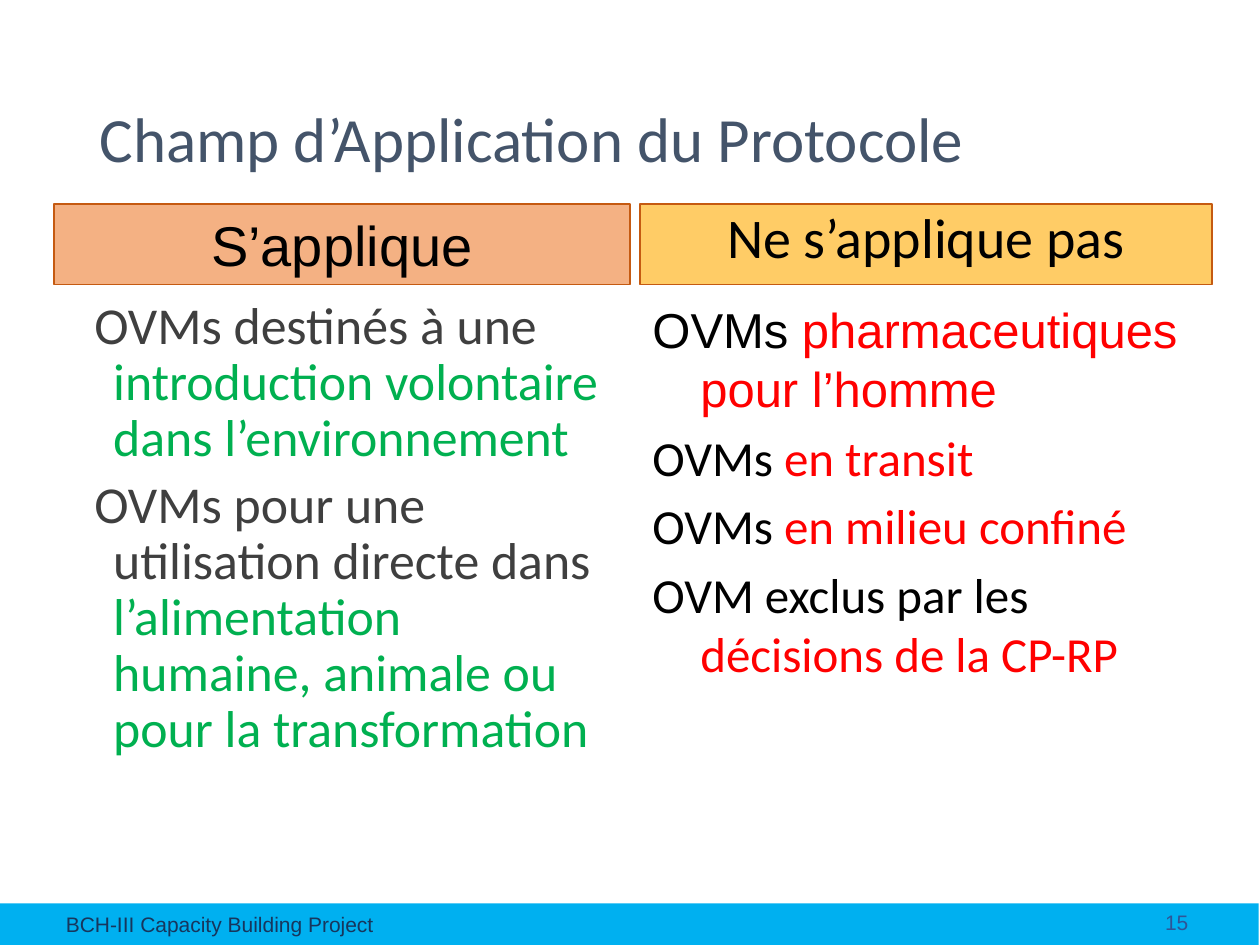
"""Build the slide on the scope of the Protocol: what it covers and what it does not."""
from pptx import Presentation
from pptx.dml.color import RGBColor
from pptx.enum import shapes, text
from pptx.util import Pt

BLACK = RGBColor(0, 0, 0)
GREY = RGBColor(0x3F, 0x3F, 0x3F)
SLATE = RGBColor(0x44, 0x54, 0x6A)
NAVY = RGBColor(0x17, 0x36, 0x5D)
BLUE = RGBColor(0x2F, 0x55, 0x97)
SKY = RGBColor(0x00, 0xB0, 0xF0)
GREEN = RGBColor(0x00, 0xB0, 0x50)
RED = RGBColor(0xFF, 0, 0)
SALMON = RGBColor(0xF4, 0xB1, 0x83)
GOLD = RGBColor(0xFF, 0xCC, 0x66)
RUST = RGBColor(0xC5, 0x5A, 0x11)
LEFT, CENTER, RIGHT = text.PP_ALIGN.LEFT, text.PP_ALIGN.CENTER, text.PP_ALIGN.RIGHT
TOP, MIDDLE = text.MSO_ANCHOR.TOP, text.MSO_ANCHOR.MIDDLE


def add_bar(left, top, width, height, fill):
    bar = slide.shapes.add_shape(shapes.MSO_SHAPE.RECTANGLE, Pt(left), Pt(top), Pt(width), Pt(height))
    bar.shadow.inherit = False
    bar.fill.solid()
    bar.fill.fore_color.rgb = fill
    return bar


def write(holder, words, font, size, color, align, anchor):
    frame = holder.text_frame
    frame.word_wrap = True
    frame.vertical_anchor = anchor
    paragraph = frame.paragraphs[0]
    paragraph.text = words
    paragraph.alignment = align
    paragraph.font.name, paragraph.font.size = font, Pt(size)
    paragraph.font.color.rgb = color
    return paragraph


prs = Presentation()
prs.slide_width, prs.slide_height = Pt(720), Pt(540)
slide = prs.slides.add_slide(prs.slide_layouts[5])

title = slide.shapes.title
title.left, title.top, title.width, title.height = Pt(49.68), Pt(28.8), Pt(620.64), Pt(104.4)
heading = write(title, "Champ d’Application du Protocole", "Calibri", 36, SLATE, LEFT, MIDDLE)
heading.line_spacing = 0.9

footer_band = add_bar(0, 516.24, 719.28, 25.92, SKY)
footer_band.line.fill.background()
for words, left, top, width, height, color, align in (
    ("BCH-III Capacity Building Project", 11.52, 516.96, 228.24, 22.32, NAVY, CENTER),
    ("15", 524.16, 514.8, 162, 24.48, BLUE, RIGHT),
):
    footer = slide.shapes.add_textbox(Pt(left), Pt(top), Pt(width), Pt(height))
    write(footer, words, "Arial", 12, color, align, MIDDLE)

for words, left, width, fill, font, spacing in (
    ("S’applique", 30.96, 329.04, SALMON, "Arial", 1),
    ("Ne s’applique pas", 365.76, 326.88, GOLD, "Calibri", 0.9),
):
    header = add_bar(left, 116.64, width, 46.08, fill)
    header.line.color.rgb = RUST
    header.line.width = Pt(0.75)
    label = write(header, words, font, 32, BLACK, CENTER, TOP)
    label.line_spacing = spacing

covered = (
    ("Calibri", "OVMs destinés à une ", "introduction volontaire dans l’environnement"),
    ("Calibri", "OVMs pour une utilisation directe dans ",
     "l’alimentation humaine, animale ou pour la transformation"),
)
excluded = (
    ("Arial", "OVMs ", "pharmaceutiques pour l’homme"),
    ("Calibri", "OVMs ", "en transit"),
    ("Calibri", "OVMs ", "en milieu confiné"),
    ("Calibri", "OVM exclus par les ", "décisions de la CP-RP"),
)
for items, left, size, spacing, gap, hanging, base, accent in (
    (covered, 30.24, 29.6, 0.9, 6.4, 10.8, GREY, GREEN),
    (excluded, 365.76, 28, 1, 5.6, 27.36, BLACK, RED),
):
    column = slide.shapes.add_textbox(Pt(left), Pt(167.76), Pt(324.72), Pt(311.76))
    column.text_frame.word_wrap = True
    for index, (font, opening, emphasis) in enumerate(items):
        item = column.text_frame.add_paragraph() if index else column.text_frame.paragraphs[0]
        properties = item._p.get_or_add_pPr()
        properties.set("marL", str(Pt(27.36)))
        properties.set("indent", str(-Pt(hanging)))
        item.line_spacing = spacing
        item.space_before = Pt(gap if index else 0)
        item.font.name, item.font.size = font, Pt(size)
        for words, color in ((opening, base), (emphasis, accent)):
            run = item.add_run()
            run.text = words
            run.font.color.rgb = color

prs.save("out.pptx")
